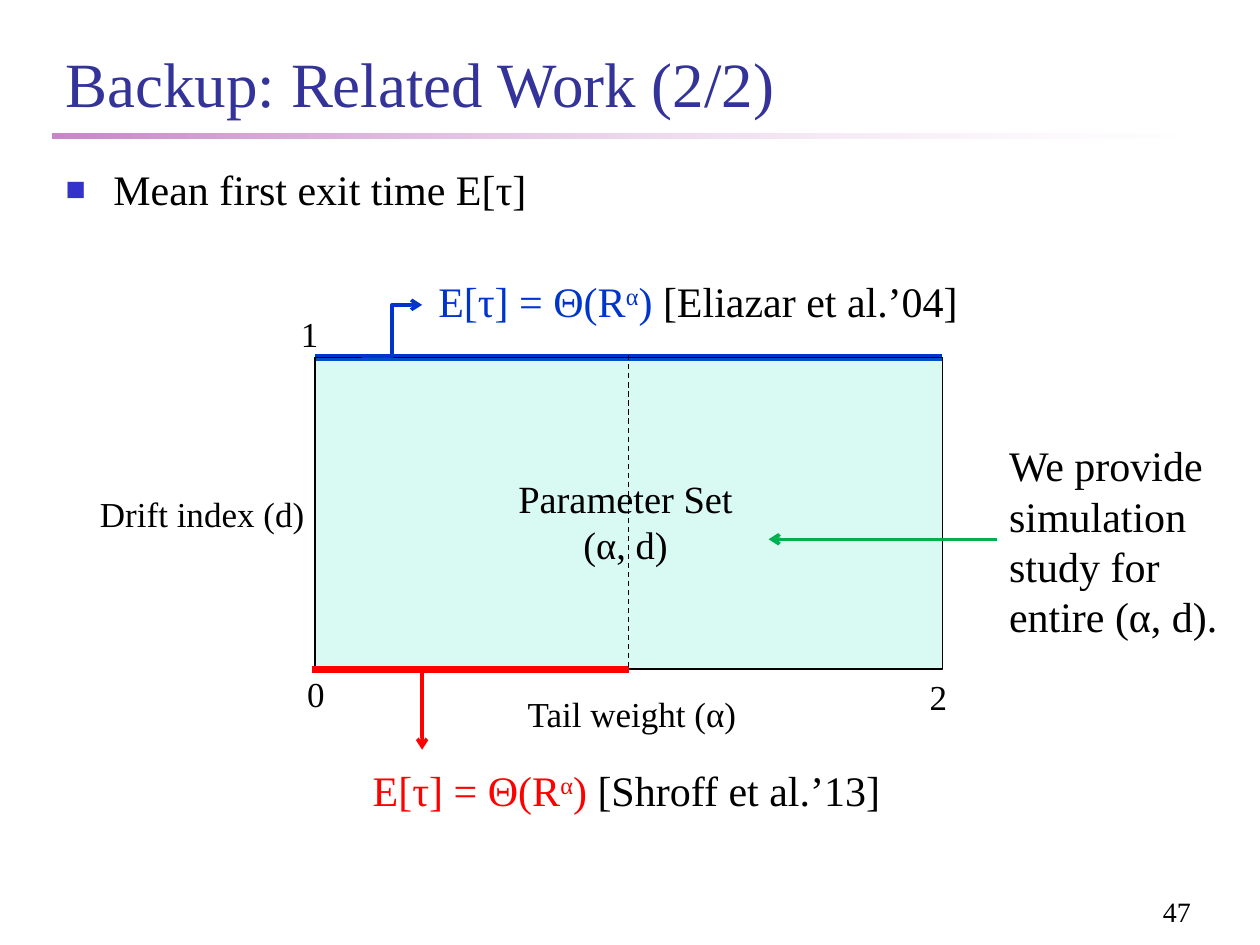
from lxml import etree
from pptx import Presentation
from pptx.dml.color import RGBColor
from pptx.enum.dml import MSO_LINE
from pptx.enum.shapes import MSO_CONNECTOR, MSO_SHAPE
from pptx.enum.text import MSO_ANCHOR, MSO_AUTO_SIZE, PP_ALIGN
from pptx.oxml.ns import qn
from pptx.util import Inches, Pt

LEFT, CENTER, RIGHT = PP_ALIGN.LEFT, PP_ALIGN.CENTER, PP_ALIGN.RIGHT
BOTTOM, TOP = MSO_ANCHOR.BOTTOM, MSO_ANCHOR.TOP
NO_FIT = MSO_AUTO_SIZE.NONE
STRAIGHT, ELBOW = MSO_CONNECTOR.STRAIGHT, MSO_CONNECTOR.ELBOW
RECT, DASH = MSO_SHAPE.RECTANGLE, MSO_LINE.DASH

FACE = "Times New Roman"
BLACK, WHITE = "000000", "FFFFFF"
BLUE, RED, GREEN = "0035CC", "FF0000", "00B050"
X, Y, W, H = 2.5, 2.84, 4.98, 2.47


def paint(hue):
    return RGBColor.from_string(hue)


def add_tag(parent, tag, **attrs):
    return etree.SubElement(parent, qn(tag), attrs)


def set_font(font, size, hue=BLACK):
    font.name = FACE
    font.size = Pt(size)
    font.color.rgb = paint(hue)


def set_alpha(shape, *levels):
    hues = shape.fill._xPr.iter(qn("a:srgbClr"))
    for hue, level in zip(hues, levels):
        add_tag(hue, "a:alpha", val=str(level * 1000))


def add_rect(slide, left, top, width, height):
    rect = slide.shapes.add_shape(
        RECT, Inches(left), Inches(top), Inches(width), Inches(height))
    rect.shadow.inherit = False
    return rect


def add_rule(slide):
    bar = add_rect(slide, 0.42, 1.06, 9, 0.04)
    bar.line.fill.background()
    bar.fill.gradient()
    bar.fill.gradient_angle = 0
    for stop, hue in zip(bar.fill.gradient_stops, ("8A008A", "D8A9D8")):
        stop.color.rgb = paint(hue)
    set_alpha(bar, 48, 0)


def add_region(slide):
    area = add_rect(slide, X, Y, W, H)
    area.fill.solid()
    area.fill.fore_color.rgb = paint("00E4A8")
    area.line.color.rgb = paint(BLACK)
    area.line.width = Pt(0.75)
    set_alpha(area, 15)


def add_text(slide, text, left, top, width, height, size=20, align=LEFT, wrap=False):
    box = slide.shapes.add_textbox(
        Inches(left), Inches(top), Inches(width), Inches(height))
    box.text_frame.word_wrap = wrap
    para = box.text_frame.paragraphs[0]
    para.text = text
    para.alignment = align
    set_font(para.font, size)
    return box


def add_bound(slide, cite, left, top, width, hue):
    box = add_text(slide, "", left, top, width, 0.5, 24)
    para = box.text_frame.paragraphs[0]
    parts = (("E[τ] = Θ(R", hue), ("α", hue), (") ", hue), (cite, BLACK))
    for text, shade in parts:
        run = para.add_run()
        run.text = text
        set_font(run.font, 24, shade)
        if text == "α":
            run._r.get_or_add_rPr().set("baseline", "30000")
    return box


def add_line(slide, start, end, hue, width, kind=STRAIGHT, arrow=False):
    link = slide.shapes.add_connector(kind, *map(Inches, start + end))
    link.line.color.rgb = paint(hue)
    link.line.width = Pt(width)
    if arrow:
        add_tag(link.line._get_or_add_ln(), "a:tailEnd", type="arrow")
    add_tag(link._element.spPr, "a:effectLst")
    return link


def fill_holder(holder, text, area, size, hue, anchor):
    holder.left, holder.top, holder.width, holder.height = map(Inches, area)
    frame = holder.text_frame
    frame.auto_size = NO_FIT
    frame.vertical_anchor = anchor
    para = frame.paragraphs[0]
    para.text = text
    para.alignment = LEFT
    para.space_before = Pt(0)
    if anchor == TOP:
        add_bullet(para)
    set_font(para.font, size, hue)


def add_bullet(para):
    props = para._p.get_or_add_pPr()
    props.set("marL", str(Inches(0.38)))
    props.set("indent", str(Inches(-0.38)))
    add_tag(add_tag(props, "a:buClr"), "a:srgbClr", val="3333CC")
    add_tag(props, "a:buSzPct", val="80000")
    add_tag(props, "a:buFont", typeface=FACE)
    add_tag(props, "a:buChar", char="■")


def main():
    deck = Presentation()
    deck.slide_width, deck.slide_height = Inches(10), Inches(7.5)
    slide = deck.slides.add_slide(deck.slide_layouts[1])
    title, body = slide.placeholders
    fill_holder(title, "Backup: Related Work (2/2)",
                (0.42, 0.08, 9.05, 0.92), 36, "333399", BOTTOM)
    fill_holder(body, "Mean first exit time E[τ]",
                (0.42, 1.25, 9.47, 6.04), 24, BLACK, TOP)
    body.line.color.rgb = paint(WHITE)
    body.line.width = Pt(0.75)
    add_rule(slide)
    add_text(slide, "47", 8.95, 7.05, 0.6, 0.37, 16, RIGHT)

    add_line(slide, (X + W, Y), (X, Y), BLUE, 4)
    add_text(slide, "Tail weight (α)", 4.09, 5.45, 1.87, 0.44)
    add_text(slide, "Drift index (d)", 0.54, 3.86, 2.13, 0.44, 20, CENTER, True)
    for text, left, top in (("0", 2.34, 5.29), ("2", 7.28, 5.31), ("1", 2.29, 2.43)):
        add_text(slide, text, left, top, 0.34, 0.44)

    add_region(slide)
    add_text(slide, "Parameter Set (α, d)", 3.86, 3.72, 2.21, 0.84, 22, CENTER, True)
    add_line(slide, (X + W / 2, Y + H), (X - 0.02, Y + H), RED, 4)
    add_bound(slide, "[Shroff et al.’13]", 2.86, 6.02, 4.28, RED)
    label = add_bound(slide, "[Eliazar et al.’04]", 3.38, 2.14, 4.38, BLUE)
    label.fill.solid()
    label.fill.fore_color.rgb = paint(WHITE)

    add_line(slide, (7.91, 4.28), (6.1, 4.28), GREEN, 2, arrow=True)
    add_text(slide, "We provide simulation study for entire (α, d).",
             7.91, 3.44, 2.09, 1.72, 24, wrap=True)
    add_line(slide, (2.87, 2.83), (3.35, 2.42), BLUE, 2, ELBOW, True)
    add_line(slide, (3.35, 5.32), (3.35, 5.95), RED, 2, arrow=True)
    split = add_line(slide, (4.99, 2.82), (4.99, 5.29), BLACK, 0.75)
    split.line.dash_style = DASH
    deck.save("out.pptx")


if __name__ == "__main__":
    main()
